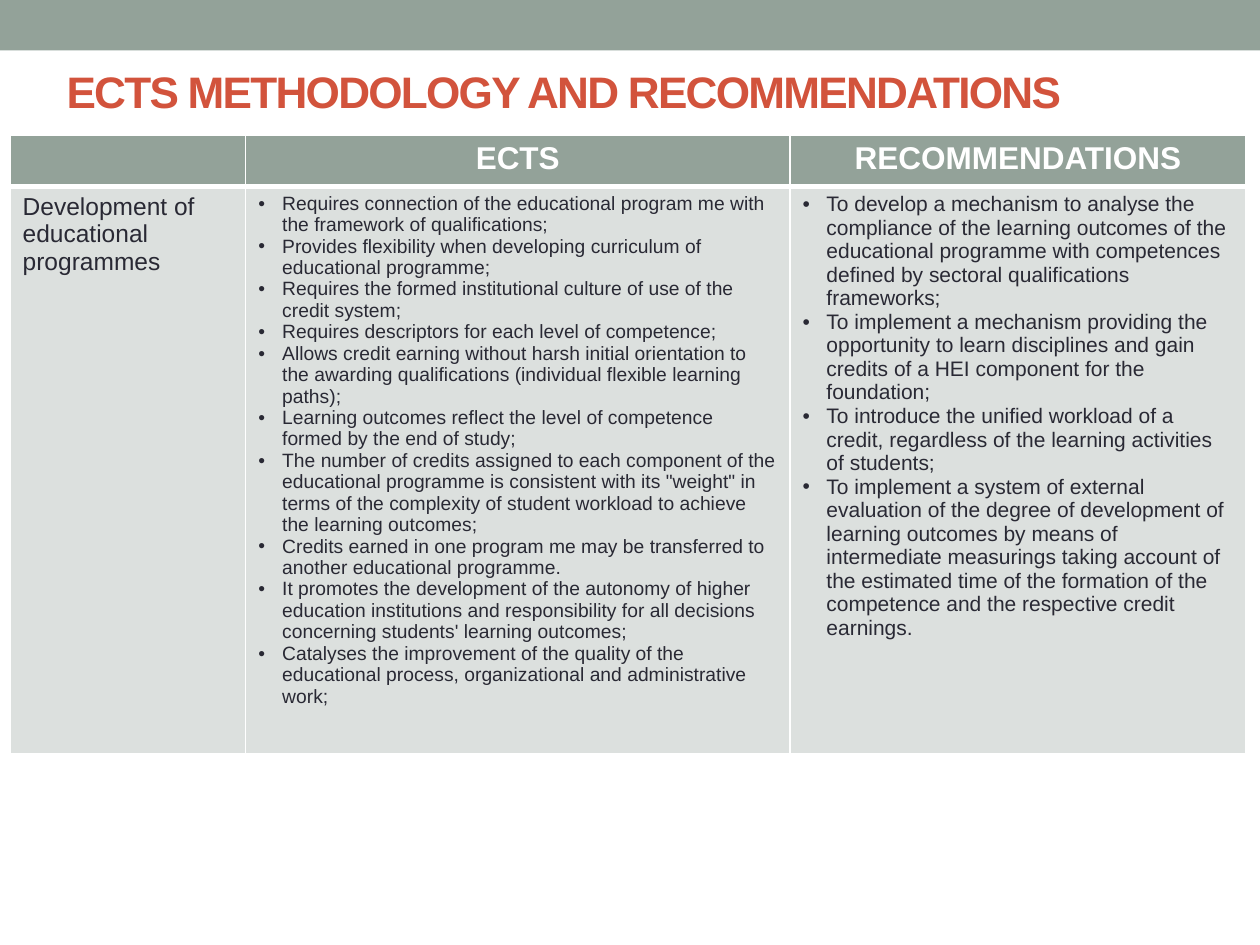
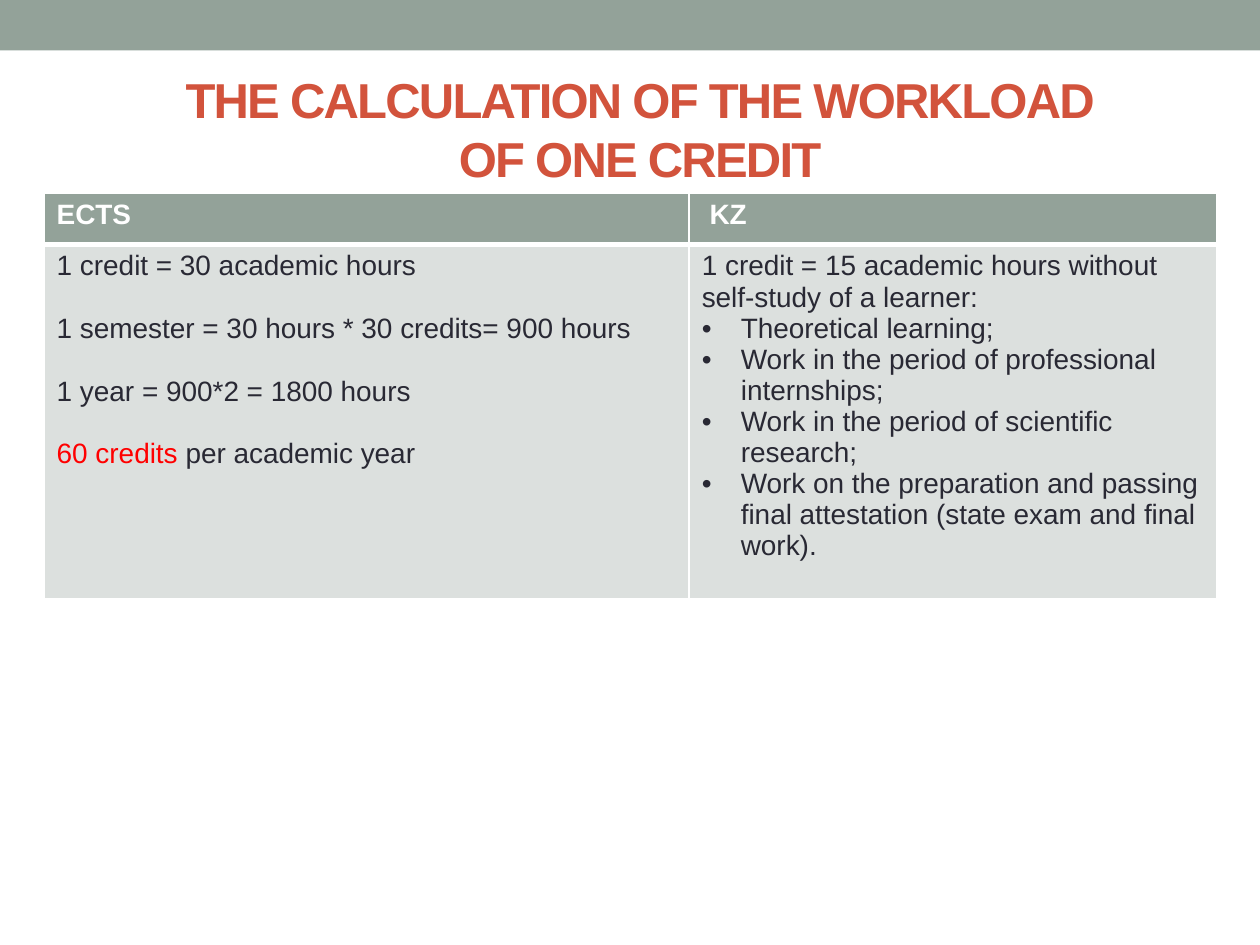
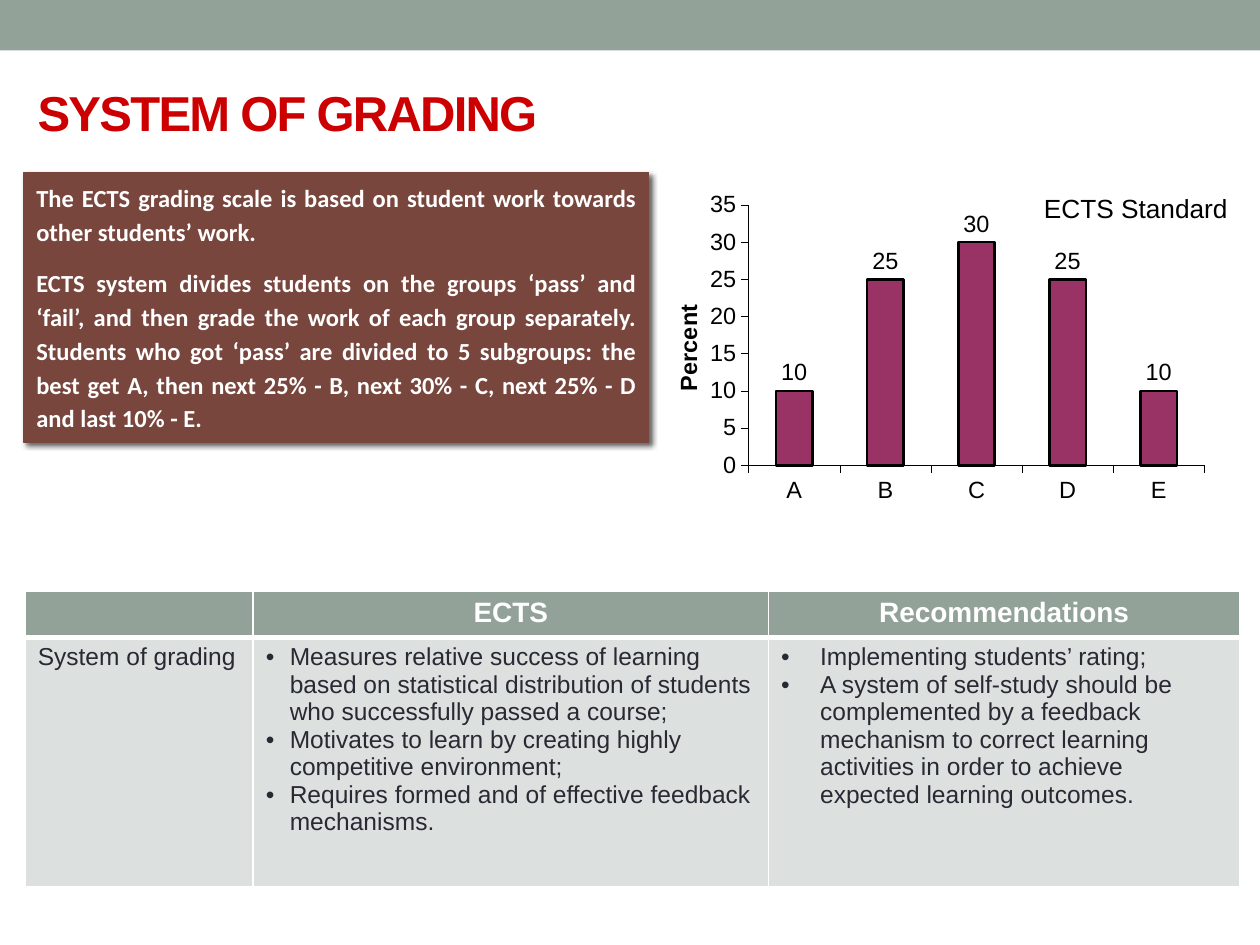
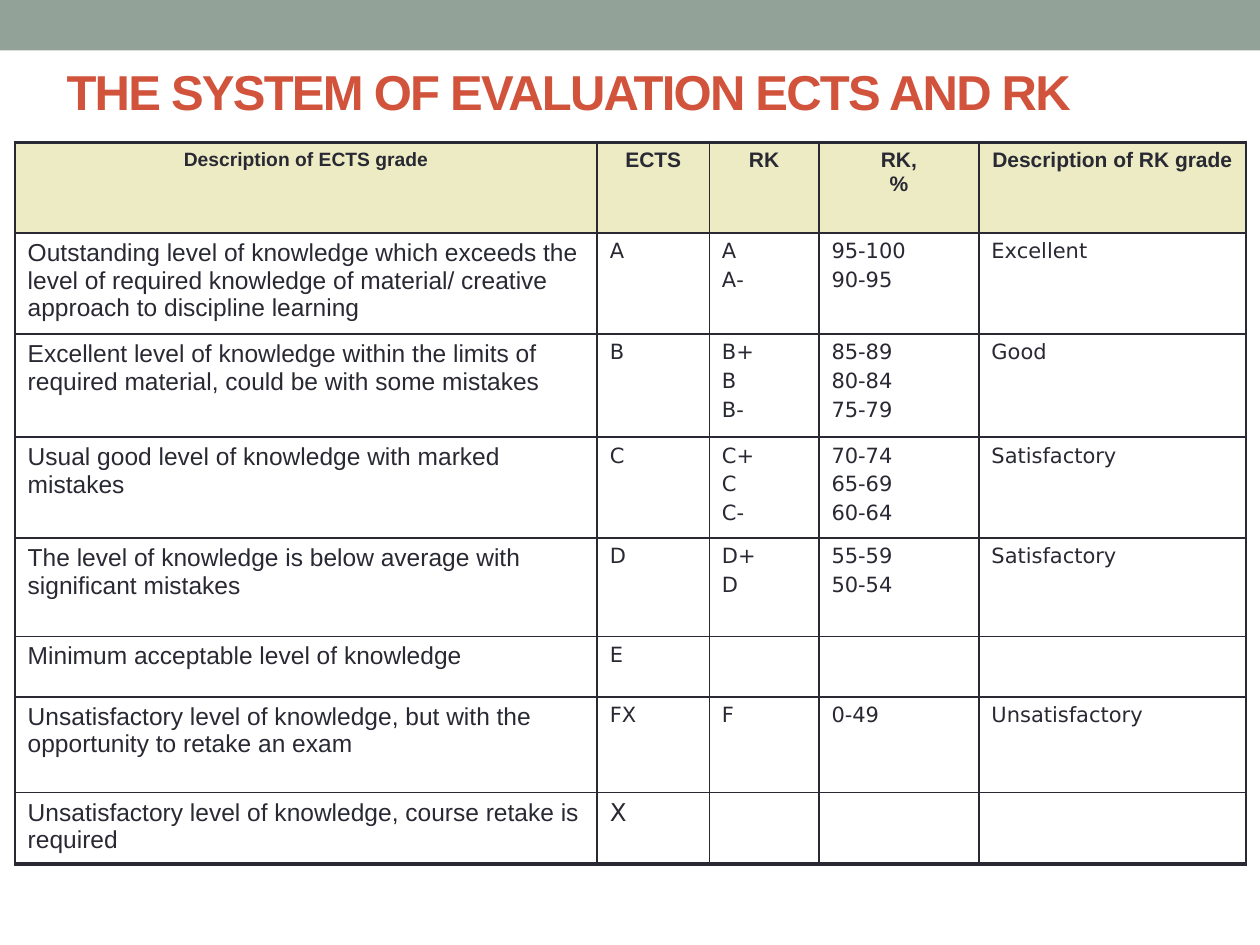
"""Build four slides on the ECTS credit and grading system."""
import pptx
import pptx.chart.data
import pptx.dml.color
import pptx.enum.chart
import pptx.enum.shapes
import pptx.enum.text
import pptx.oxml
import pptx.oxml.ns
import pptx.util
from lxml import etree

Inches = pptx.util.Inches
Pt = pptx.util.Pt
qn = pptx.oxml.ns.qn
ALIGN = pptx.enum.text.PP_ALIGN
ANCHOR = pptx.enum.text.MSO_ANCHOR
RECT = pptx.enum.shapes.MSO_SHAPE.RECTANGLE

SAGE, PALE, CREAM = "93A299", "DCE0DE", "ECEBC3"
RUST, CRIMSON, RED = "D2533C", "CC0000", "FF0000"
INK, WHITE, BLACK = "292934", "FFFFFF", "000000"
BROWN, PLUM = "79463D", "993366"
SANS, PLAIN, BODY = "Arial", "DejaVu Sans", "Calibri"
BULLET = "• "


def color(code):
    """Turn a hex string into a colour."""
    return pptx.dml.color.RGBColor.from_string(code)


def style(font, size, code, bold=False, face=SANS):
    """Set the look of a font."""
    font.size, font.bold, font.name = Pt(size), bold, face
    font.color.rgb = color(code)


def mark(para, indent):
    """Give a paragraph a bullet with a hanging indent."""
    props = para._p.get_or_add_pPr()
    props.set("marL", str(Inches(indent)))
    props.set("indent", str(-Inches(indent)))
    etree.SubElement(props, qn("a:buFont"), typeface=SANS)
    etree.SubElement(props, qn("a:buChar"), char=BULLET.strip())


def write(frame, lines, size, code, bold=False, face=SANS, align=ALIGN.LEFT,
          indent=0.19, before=0, after=0, pitch=None):
    """Fill a text frame with styled paragraphs."""
    for i, line in enumerate(lines):
        para = frame.paragraphs[0] if i == 0 else frame.add_paragraph()
        para.text = line.removeprefix(BULLET)
        para.alignment = align
        para.space_before, para.space_after = Pt(before), Pt(after)
        if pitch:
            para.line_spacing = pitch
        if line.startswith(BULLET):
            mark(para, indent)
        for run in para.runs:
            style(run.font, size, code, bold, face)
        if not line:
            etree.SubElement(para._p, qn("a:endParaRPr"), sz=str(size * 100))


def band(slide):
    """Draw the strip along the top of a slide."""
    strip = slide.shapes.add_shape(RECT, 0, 0, Inches(10), Inches(0.4))
    strip.shadow.inherit = False
    strip.fill.solid()
    strip.fill.fore_color.rgb = color(SAGE)
    strip.line.fill.background()


def title(slide, box, lines, size=28, code=RUST, align=ALIGN.LEFT):
    """Place a tightly spaced bold heading in a box."""
    frame = slide.shapes.add_textbox(*map(Inches, box)).text_frame
    frame.word_wrap = True
    frame.vertical_anchor = ANCHOR.MIDDLE
    write(frame, lines, size, code, True, align=align)
    for para in frame.paragraphs:
        for run in para.runs:
            run.font._element.set("spc", "-100")


def paint(cell, fill, code, top, foot):
    """Set the borders of a cell, then its fill."""
    props = cell._tc.get_or_add_tcPr()
    for side, width in zip("LRTB", (1, 1, top, foot)):
        line = etree.SubElement(props, qn("a:ln" + side), w=str(Pt(width)))
        solid = etree.SubElement(line, qn("a:solidFill"))
        etree.SubElement(solid, qn("a:srgbClr"), val=code)
    if fill:
        cell.fill.solid()
        cell.fill.fore_color.rgb = color(fill)
    else:
        cell.fill.background()


def grid(slide, spot, cols, rows):
    """Add a plain table at a spot with the given column and row sizes."""
    box = (*spot, sum(cols), sum(rows))
    table = slide.shapes.add_table(
        len(rows), len(cols), *map(Inches, box)).table
    table.first_row = table.horz_banding = False
    for col, width in zip(table.columns, cols):
        col.width = Inches(width)
    for row, height in zip(table.rows, rows):
        row.height = Inches(height)
    return table


def compare(slide, spot, cols, rows, heads, size, cells, align=ALIGN.CENTER):
    """Add a table of one header row above one row of notes."""
    table = grid(slide, spot, cols, rows)
    for i, (head, (lines, look)) in enumerate(zip(heads, cells)):
        top, note = table.cell(0, i), table.cell(1, i)
        paint(top, SAGE, WHITE, 1, 3)
        write(top.text_frame, [head], size, WHITE, True, align=align)
        paint(note, PALE, WHITE, 3, 1)
        write(note.text_frame, lines, code=INK, **look)
    return table


def grades(slide, spot, cols, rows, heads, body):
    """Add the ruled table of grades."""
    table = grid(slide, spot, cols, rows)
    last = len(body)
    for i, head in enumerate(heads):
        cell = table.cell(0, i)
        paint(cell, CREAM, INK, 2.25, 1)
        write(cell.text_frame, head.split("\n"), 12 if i else 11, INK, True,
              align=ALIGN.CENTER)
    for j, line in enumerate(body, 1):
        for i, text in enumerate(line):
            cell = table.cell(j, i)
            paint(cell, None, INK, 1, 2.25 if j == last else 1)
            size = 12 if i and j < last else 14
            write(cell.text_frame, text.split("\n"), size, INK,
                  face=PLAIN if i else SANS, before=0.2 * size if i else 0)


def panel(slide, box, lines):
    """Draw a shaded box of justified text."""
    shape = slide.shapes.add_shape(RECT, *map(Inches, box))
    shape.fill.solid()
    shape.fill.fore_color.rgb = color(BROWN)
    shape.line.color.rgb = color(BROWN)
    shape.line.width = Pt(0.75)
    shape.shadow.inherit = False
    glow = shape._element.spPr.find(qn("a:effectLst"))
    shade = etree.SubElement(
        glow, qn("a:outerShdw"), blurRad=str(Pt(3)), dist=str(Pt(2)),
        dir="2700000", algn="tl", rotWithShape="0")
    tint = etree.SubElement(shade, qn("a:srgbClr"), val=BLACK)
    etree.SubElement(tint, qn("a:alpha"), val="60000")
    frame = shape.text_frame
    frame.word_wrap = True
    frame.vertical_anchor = ANCHOR.TOP
    write(frame, lines, 14, WHITE, True, BODY, ALIGN.JUSTIFY, after=10,
          pitch=1.15)


def layout(**parts):
    """Make a manual layout for a part of a chart."""
    outer = etree.Element(qn("c:layout"))
    inner = etree.SubElement(outer, qn("c:manualLayout"))
    for name, value in parts.items():
        etree.SubElement(inner, qn("c:" + name), val=str(value))
    return outer


def bars(slide, box, names, values):
    """Add the column chart of grade shares."""
    kinds = pptx.enum.chart
    data = pptx.chart.data.CategoryChartData()
    data.categories = names
    data.add_series("Series 1", values)
    chart = slide.shapes.add_chart(
        kinds.XL_CHART_TYPE.COLUMN_CLUSTERED, *map(Inches, box), data).chart
    style(chart.font, 13.4, BLACK)
    chart.has_legend = False

    chart.has_title = True
    head = chart.chart_title
    head.text_frame.text = "ECTS Standard"
    style(head.text_frame.paragraphs[0].runs[0].font, 15, BLACK)
    head.include_in_layout = False
    for old in head._element.findall(qn("c:layout")):
        head._element.remove(old)
    head._element.find(qn("c:tx")).addnext(
        layout(xMode="edge", yMode="edge", x=0.65, y=0.02))

    area = chart._chartSpace.chart.plotArea
    for old in area.findall(qn("c:layout")):
        area.remove(old)
    area.insert(0, layout(layoutTarget="inner", xMode="edge", yMode="edge",
                          x=0.14, y=0.07, w=0.8, h=0.73))

    for axis in (chart.category_axis, chart.value_axis):
        axis.has_major_gridlines = False
        axis.major_tick_mark = kinds.XL_TICK_MARK.OUTSIDE
        axis.minor_tick_mark = kinds.XL_TICK_MARK.NONE
        style(axis.tick_labels.font, 13.4, BLACK)
        axis.format.line.color.rgb = color(BLACK)
        axis.format.line.width = Pt(0.36)
    scale = chart.value_axis
    scale.minimum_scale, scale.maximum_scale, scale.major_unit = 0, 35, 5
    scale.has_title = True
    frame = scale.axis_title.text_frame
    frame.text = "Percent"
    style(frame.paragraphs[0].runs[0].font, 13.4, BLACK, True)

    plot = chart.plots[0]
    plot.gap_width, plot.vary_by_categories = 150, False
    plot.has_data_labels = True
    labels = plot.data_labels
    labels.show_value = True
    labels.position = kinds.XL_LABEL_POSITION.OUTSIDE_END
    style(labels.font, 13.4, BLACK)
    look = plot.series[0].format
    look.fill.solid()
    look.fill.fore_color.rgb = color(PLUM)
    look.line.color.rgb = color(BLACK)
    look.line.width = Pt(1.45)


def methods(slide):
    """Build the slide on methods and advice."""
    title(slide, (0.43, 0.29, 9, 0.87),
          ["ECTS METHODOLOGY AND RECOMMENDATIONS"], 25.2)
    traits = [
        "• Requires connection of the educational program me with the framework of qualifications;",
        "• Provides flexibility when developing curriculum of educational programme;",
        "• Requires the formed institutional culture of use of the credit system;",
        "• Requires descriptors for each level of competence;",
        "• Allows credit earning without harsh initial orientation to the awarding qualifications (individual flexible learning paths);",
        "• Learning outcomes reflect the level of competence formed by the end of study;",
        "• The number of credits assigned to each component of the educational programme is consistent with its \"weight\" in terms of the complexity of student workload to achieve the learning outcomes;",
        "• Credits earned in one program me may be transferred to another educational programme.",
        "• It promotes the development of the autonomy of higher education institutions and responsibility for all decisions concerning students' learning outcomes;",
        "• Catalyses the improvement of the quality of the educational process, organizational and administrative work;",
    ]
    advice = [
        "• To develop a mechanism to analyse the compliance of the learning outcomes of the educational programme with competences defined by sectoral qualifications frameworks;",
        "• To implement a mechanism providing the opportunity to learn disciplines and gain credits of a HEI component for the foundation;",
        "• To introduce the unified workload of a credit, regardless of the learning activities of students;",
        "• To implement a system of external evaluation of the degree of development of learning outcomes by means of intermediate measurings taking account of the estimated time of the formation of the competence and the respective credit earnings.",
    ]
    compare(slide, (0.08, 1.07), (1.87, 4.32, 3.62), (0.41, 4.45),
            ("", "ECTS", "RECOMMENDATIONS"), 18,
            [(["Development of educational programmes"], {"size": 14}),
             (traits, {"size": 11}), (advice, {"size": 12})])


def workload(slide):
    """Build the slide on the hours behind one credit."""
    title(slide, (0.59, 0.5, 8.98, 1.04),
          ["THE CALCULATION OF THE WORKLOAD", "OF ONE CREDIT"],
          align=ALIGN.CENTER)
    sums = [
        "1 credit = 30 academic hours",
        "1 semester = 30 hours * 30 credits= 900 hours",
        "1 year = 900*2 = 1800 hours",
        "60 credits ",
    ]
    tasks = [
        "1 credit = 15 academic hours without self-study of a learner:",
        "• Theoretical learning;",
        "• Work in the period of professional internships;",
        "• Work in the period of scientific research;",
        "• Work on the preparation and passing final attestation (state exam and final work).",
    ]
    table = compare(slide, (0.35, 1.53), (5.12, 4.19), (0.41, 2.81),
                    ("ECTS", " KZ"), 16,
                    [(sums, {"size": 16, "after": 18}),
                     (tasks, {"size": 16, "indent": 0.31})], ALIGN.LEFT)
    para = table.cell(1, 0).text_frame.paragraphs[-1]
    para.runs[0].font.color.rgb = color(RED)
    rest = para.add_run()
    rest.text = "per academic year"
    style(rest.font, 16, INK)


def grading(slide):
    """Build the slide on the grading scale."""
    bars(slide, (5.31, 1.43, 4.52, 2.83), "ABCDE", (10, 25, 30, 25, 10))
    title(slide, (0.2, 0.6, 6.22, 0.57), ["SYSTEM OF GRADING"], code=CRIMSON)
    traits = [
        "• Measures relative success of learning based on statistical distribution of students who successfully passed a course;",
        "• Motivates to learn by creating highly competitive environment;",
        "• Requires formed and of effective feedback mechanisms.",
    ]
    advice = [
        "• Implementing students’ rating;",
        "• A system of self-study should be complemented by a feedback mechanism to correct learning activities in order to achieve expected learning outcomes.",
    ]
    compare(slide, (0.2, 4.69), (1.81, 4.09, 3.74), (0.33, 1.98),
            ("", "ECTS", "Recommendations"), 16,
            [(["System of grading"], {"size": 14}), (traits, {"size": 14}),
             (advice, {"size": 14, "indent": 0.31})])
    panel(slide, (0.19, 1.37, 4.96, 2.14), [
        "The ECTS grading scale is based on student work towards other students’ work.",
        "ECTS system divides students on the groups ‘pass’ and ‘fail’, and then grade the work of each group separately. Students who got ‘pass’ are divided to 5 subgroups: the best get A, then next 25% - B, next 30% - C, next 25% - D and last 10% - E.",
    ])


def marks(slide):
    """Build the slide that matches ECTS and RK grades."""
    body = [
        ("Outstanding level of knowledge which exceeds the level of required knowledge of material/ creative approach to discipline learning",
         "А", "А\nА-", "95-100\n90-95", "Excellent"),
        ("Excellent level of knowledge within the limits of required material, could be with some mistakes",
         "В", "В+\nВ\nВ-", "85-89\n80-84\n75-79", "Good"),
        ("Usual good level of knowledge with marked mistakes",
         "С", "С+\nС\nС-", "70-74\n65-69\n60-64", "Satisfactory"),
        ("The level of knowledge is below average with significant mistakes",
         "D", "D+\nD", "55-59\n50-54", "Satisfactory"),
        ("Minimum acceptable level of knowledge", "E", "", "", ""),
        ("Unsatisfactory level of knowledge, but with the opportunity to retake an exam",
         "FX", "F", "0-49", "Unsatisfactory"),
        ("Unsatisfactory level of knowledge, course retake is required",
         "X", "", "", ""),
    ]
    grades(slide, (0.12, 1.13), (4.62, 0.89, 0.87, 1.27, 2.12),
           (0.72, 0.76, 0.82, 0.8, 0.78, 0.48, 0.76, 0.54),
           ("Description of ECTS grade", "ECTS", "RK", "RK,\n%",
            "Description of RK grade"), body)
    title(slide, (0.43, 0.44, 9.15, 0.57),
          ["THE SYSTEM OF EVALUATION ECTS AND RK"])


def main():
    """Build and save the deck."""
    deck = pptx.Presentation()
    deck.slide_width, deck.slide_height = Inches(10), Inches(7.5)
    for build in (methods, workload, grading, marks):
        slide = deck.slides.add_slide(deck.slide_layouts[6])
        band(slide)
        build(slide)
    deck.save("out.pptx")


if __name__ == "__main__":
    main()
